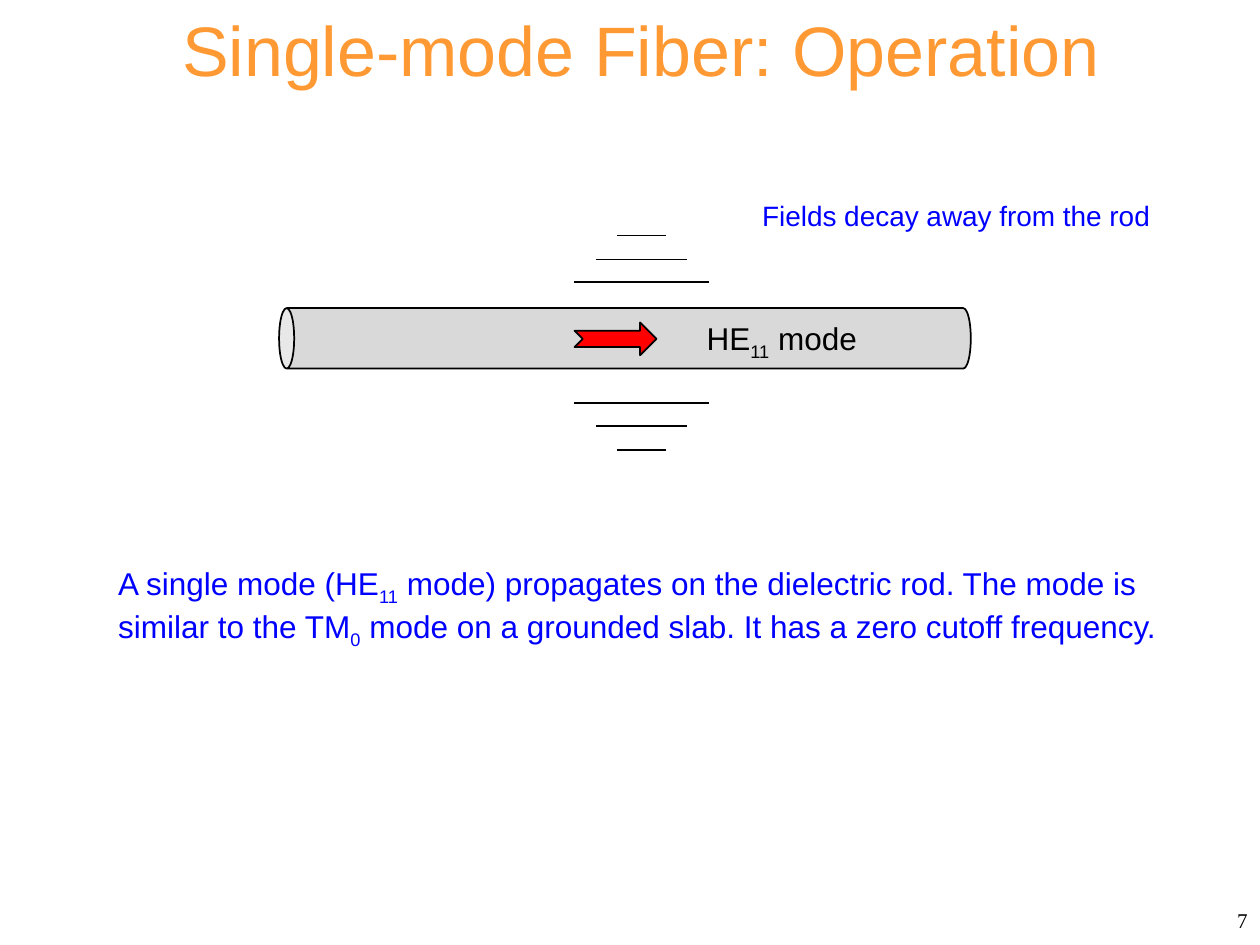
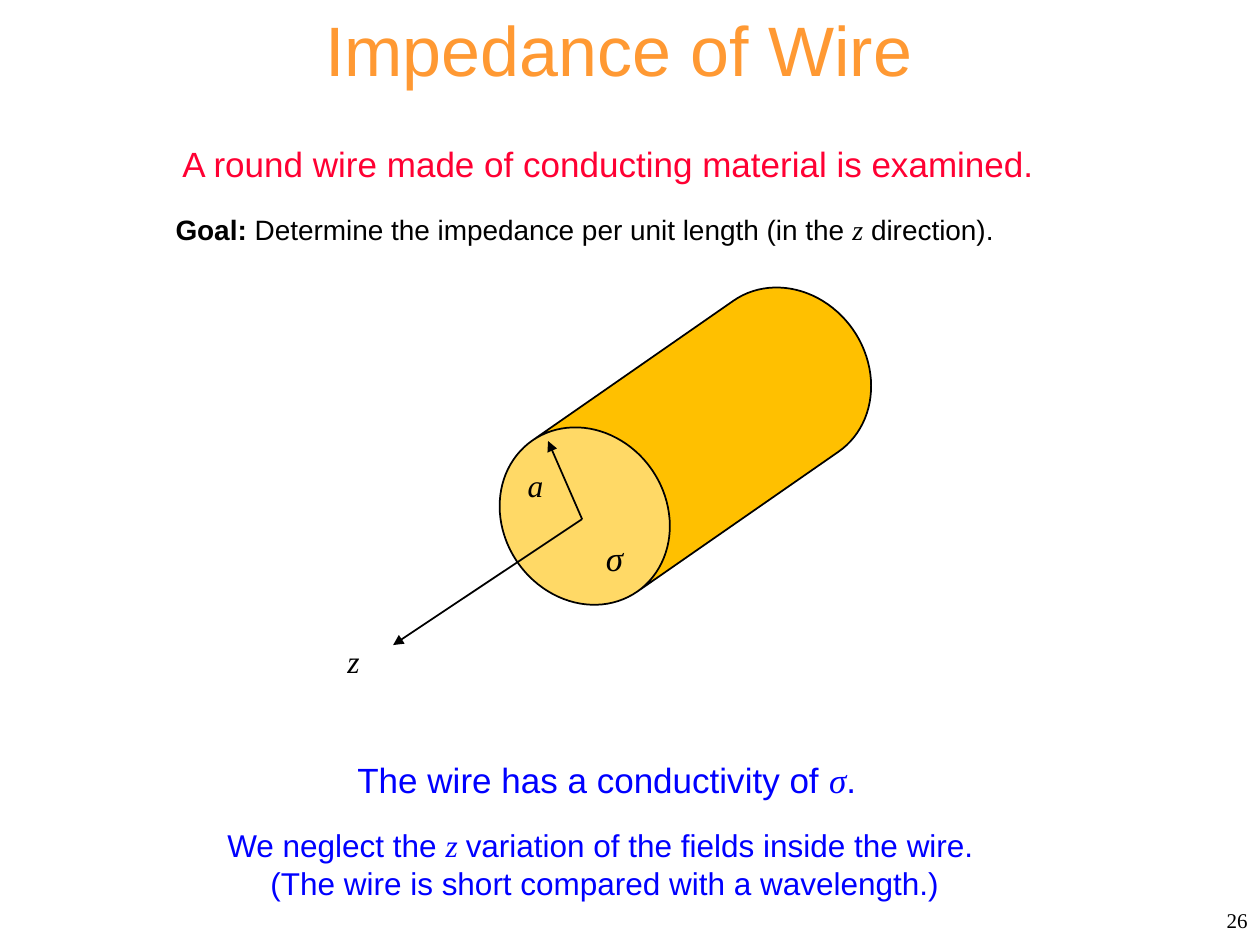
from lxml import etree
from pptx import Presentation
from pptx import util as u
from pptx.dml.color import RGBColor
from pptx.enum import shapes, text
from pptx.oxml.ns import qn

COLORS = {
    "title": "FF9933", "ink": "000000", "note": "0000FF", "lead": "FF0033",
    "rod": "D9D9D9", "arrow": "FF0000", "wire": "FFC000",
}
SANS, SERIF = "Arial", "Times New Roman"
LEFT, CENTER, RIGHT = text.PP_ALIGN.LEFT, text.PP_ALIGN.CENTER, text.PP_ALIGN.RIGHT
SHAPE = shapes.MSO_SHAPE


def rgb(name):
    return RGBColor.from_string(COLORS[name])


def inches(*values):
    return [u.Inches(value) for value in values]


class Deck:
    def __init__(self):
        self.prs = Presentation()
        self.prs.slide_width, self.prs.slide_height = inches(10, 7.5)
        self.slide = None

    def new_slide(self, title, title_box, number):
        self.slide = self.prs.slides.add_slide(self.prs.slide_layouts[6])
        self.text(title_box, [[(title, "")]], 40, "title", CENTER)
        self.text((7.67, 7.1, 2.33, 0.4), [[(number, "serif")]], 12, align=RIGHT,
                  anchor=text.MSO_ANCHOR.MIDDLE, grow=False)

    def text(self, box, paragraphs, size, color="ink", align=LEFT, wrap=True,
             anchor=text.MSO_ANCHOR.TOP, grow=True):
        """Each paragraph is a list of (words, style); style is "", serif, math, bold or sub."""
        frame = self.slide.shapes.add_textbox(*inches(*box)).text_frame
        frame.word_wrap = wrap
        frame.vertical_anchor = anchor
        if grow:
            frame.auto_size = text.MSO_AUTO_SIZE.SHAPE_TO_FIT_TEXT
        for index, runs in enumerate(paragraphs):
            paragraph = frame.add_paragraph() if index else frame.paragraphs[0]
            paragraph.alignment = align
            for words, style in runs:
                run = paragraph.add_run()
                run.text = words
                run.font.size = u.Pt(size)
                run.font.name = SERIF if style in ("serif", "math") else SANS
                run.font.color.rgb = rgb(color)
                run.font.italic = style == "math"
                run.font.bold = style == "bold"
                if style == "sub":
                    run._r.get_or_add_rPr().set("baseline", "-25000")

    def symbol(self, box, letter, size=18):
        self.text(box, [[(letter, "math")]], size, wrap=False)

    def shape(self, preset, box, fill, rotation=0, adjust=None):
        shape = self.slide.shapes.add_shape(preset, *inches(*box))
        shape.shadow.inherit = False
        shape.rotation = rotation
        if adjust is not None:
            shape.adjustments[0] = adjust
        shape.fill.solid()
        shape.fill.fore_color.rgb = rgb(fill)
        self.outline(shape.line)

    def line(self, start, end, arrow=False):
        line = self.slide.shapes.add_connector(
            shapes.MSO_CONNECTOR.STRAIGHT, *inches(*start, *end))
        self.outline(line.line)
        if arrow:
            etree.SubElement(line.line._get_or_add_ln(), qn("a:tailEnd"), type="triangle")
        etree.SubElement(line._element.spPr, qn("a:effectLst"))

    def outline(self, line):
        line.color.rgb = rgb("ink")
        line.width = u.Pt(1)


def single_mode_fiber(deck):
    deck.new_slide("Single-mode Fiber: Operation", (0.82, 0, 8.53, 0.77), "7")
    deck.shape(SHAPE.CAN, (4.72, -0.06, 0.48, 5.49), "rod", rotation=270)
    deck.shape(SHAPE.NOTCHED_RIGHT_ARROW, (4.56, 2.56, 0.65, 0.26), "arrow")

    # Field lines shorten with distance on both sides of the rod
    field_x, field_y = 5.09, 2.72
    for side in (-1, 1):
        for distance, length in ((0.48, 1.07), (0.66, 0.72), (0.85, 0.39)):
            y = field_y + side * distance
            deck.line((field_x - length / 2, y), (field_x + length / 2, y))

    deck.text((5.51, 2.48, 1.47, 0.4),
              [[("HE", ""), ("11", "sub"), (" mode", "")]], 18, wrap=False)
    deck.text((0.84, 4.43, 8.64, 0.71), [[
        ("A single mode (HE", ""), ("11", "sub"),
        (" mode) propagates on the dielectric rod. The mode is similar to the TM", ""),
        ("0", "sub"),
        (" mode on a grounded slab. It has a zero cutoff frequency.", ""),
    ]], 18, "note")
    deck.text((5.95, 1.53, 3.32, 0.37),
              [[("Fields decay away from the rod", "")]], 16, "note", wrap=False)


def wire_impedance(deck):
    deck.new_slide("Impedance of Wire", (1.91, 0, 6, 0.77), "26")
    deck.text((1.35, 1.08, 7.57, 0.44),
              [[("A round wire made of conducting material is examined.", "")]], 20, "lead")
    deck.text((1.27, 1.64, 6.74, 0.37), [[
        ("Goal:", "bold"), (" Determine the impedance per unit length (in the ", ""),
        ("z", "math"), (" direction).", ""),
    ]], 16, align=CENTER, wrap=False)

    deck.shape(SHAPE.CAN, (4.71, 1.92, 1.46, 3.24), "wire", rotation=235.2, adjust=0.887)
    face_center = (4.62, 4.12)
    for tip in ((4.35, 3.5), (3.12, 5.12)):
        deck.line(face_center, tip, arrow=True)
    deck.symbol((4.09, 3.65, 0.33, 0.4), "a")
    deck.symbol((4.71, 4.21, 0.37, 0.44), "σ", 20)
    deck.symbol((2.66, 5.05, 0.3, 0.4), "z")

    deck.text((2.27, 5.97, 5.09, 0.44), [[
        ("The wire has a conductivity of ", ""), ("σ", "math"), (".", ""),
    ]], 20, "note", CENTER)
    deck.text((1.67, 6.51, 6.19, 0.71), [
        [("We neglect the ", ""), ("z ", "math"),
         ("variation of the fields inside the wire.", "")],
        [(" (The wire is short compared with a wavelength.)", "")],
    ], 18, "note", CENTER, wrap=False)


def main():
    deck = Deck()
    single_mode_fiber(deck)
    wire_impedance(deck)
    deck.prs.save("out.pptx")


if __name__ == "__main__":
    main()
